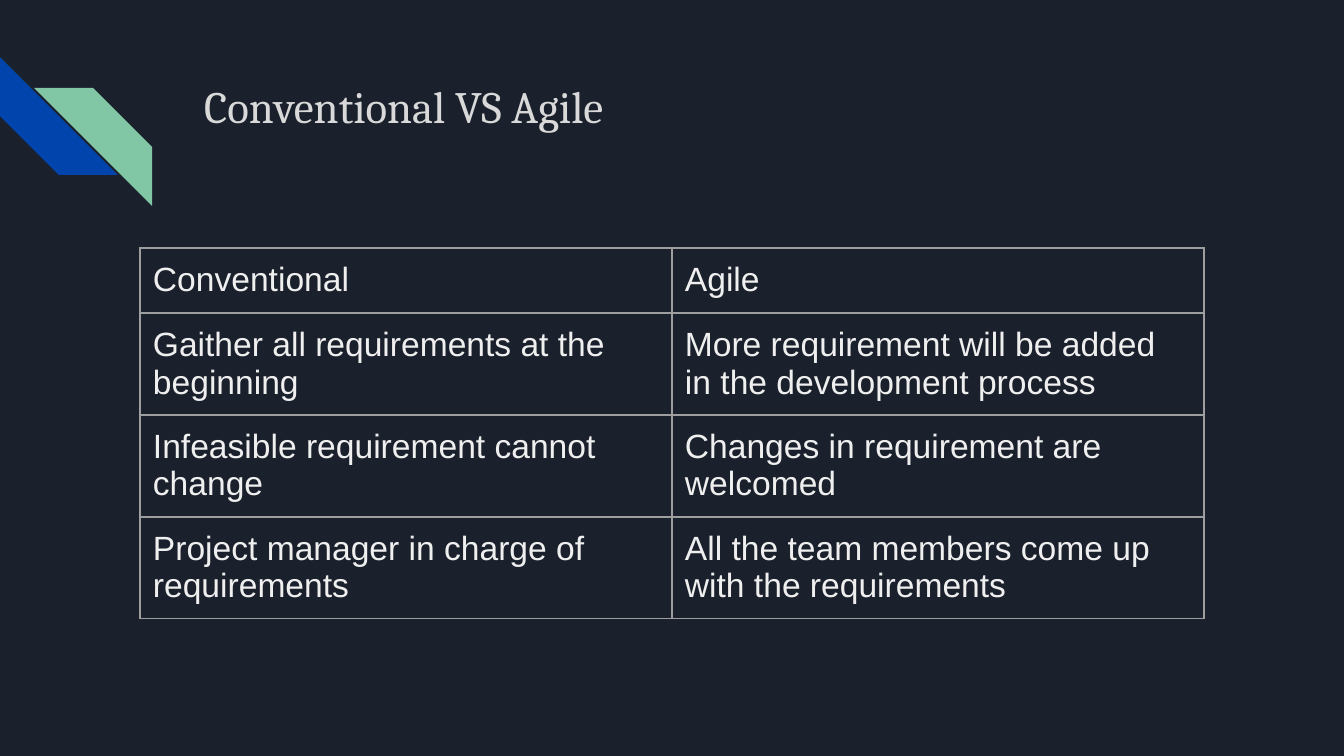
from lxml.etree import SubElement
from pptx import Presentation
from pptx.dml.color import RGBColor
from pptx.enum.shapes import MSO_SHAPE
from pptx.enum.text import MSO_ANCHOR, PP_ALIGN
from pptx.oxml.ns import qn
from pptx.util import Pt

EMU_PER_PX = 914400 / 134.4
INSET = 13
TITLE = "Conventional VS Agile"
COMPARISON = [
    ("Conventional", "Agile"),
    ("Gaither all requirements at the beginning",
     "More requirement will be added in the development process"),
    ("Infeasible requirement cannot change",
     "Changes in requirement are welcomed"),
    ("Project manager in charge of requirements",
     "All the team members come up with the requirements"),
]


def px(length):
    return round(length * EMU_PER_PX)


def color(hex_value):
    return RGBColor.from_string(hex_value)


def write(frame, text, size, font, fill, line_spacing=1.0, space_after=0):
    frame.word_wrap = True
    frame.vertical_anchor = MSO_ANCHOR.TOP
    paragraph = frame.paragraphs[0]
    paragraph.alignment = PP_ALIGN.LEFT
    paragraph.line_spacing = line_spacing
    paragraph.space_after = Pt(space_after)
    run = paragraph.add_run()
    run.text = text
    run.font.size = Pt(size)
    run.font.name = font
    run.font.bold = False
    run.font.color.rgb = color(fill)


def set_borders(cell, hex_value, width):
    properties = cell._tc.get_or_add_tcPr()
    for position, side in enumerate(("lnL", "lnR", "lnT", "lnB")):
        line = SubElement(properties, qn(f"a:{side}"), w=str(Pt(width)))
        fill = SubElement(line, qn("a:solidFill"))
        SubElement(fill, qn("a:srgbClr"), val=hex_value)
        # Borders come before the cell fill
        properties.insert(position, line)


def add_stripes(slide, left, top):
    # Two diagonal stripes, turned opposite ways
    for dx, dy, rotation, fill in ((0, 0, 270, "0145AC"), (34, 31, 90, "82C7A5")):
        stripe = slide.shapes.add_shape(
            MSO_SHAPE.DIAGONAL_STRIPE, px(left + dx), px(top + dy), px(118), px(118))
        stripe.rotation = rotation
        stripe.adjustments[0] = 0.5
        stripe.shadow.inherit = False
        stripe.fill.solid()
        stripe.fill.fore_color.rgb = color(fill)
        stripe.line.fill.background()


def add_title(slide, left, top, width, height):
    title = slide.shapes.title
    title.left, title.top = px(left), px(top)
    title.width, title.height = px(width), px(height)
    frame = title.text_frame
    frame.margin_left = frame.margin_right = px(INSET)
    frame.margin_top = frame.margin_bottom = px(INSET)
    write(frame, TITLE, size=24, font="Cambria", fill="D9D9D9",
          line_spacing=1.15, space_after=16)


def add_comparison(slide, left, top, width, row_heights):
    columns = len(COMPARISON[0])
    table = slide.shapes.add_table(
        len(COMPARISON), columns, px(left), px(top),
        px(width), px(sum(row_heights))).table
    table.first_row = table.horz_banding = False
    for column in table.columns:
        column.width = px(width / columns)
    for row, height, texts in zip(table.rows, row_heights, COMPARISON):
        row.height = px(height)
        for cell, text in zip(row.cells, texts):
            cell.margin_left = cell.margin_right = px(INSET)
            cell.margin_top = cell.margin_bottom = px(INSET)
            cell.fill.background()
            set_borders(cell, "9E9E9E", 0.75)
            write(cell.text_frame, text, size=18, font="Arial", fill="EFEFEF")


def main():
    presentation = Presentation()
    presentation.slide_width, presentation.slide_height = px(1344), px(756)
    slide = presentation.slides.add_slide(presentation.slide_layouts[5])
    slide.background.fill.solid()
    slide.background.fill.fore_color.rgb = color("1B212C")
    add_stripes(slide, 0, 57)
    add_title(slide, 191, 58, 1035, 134)
    add_comparison(slide, 140, 248, 1064, (65, 102, 102, 102))
    presentation.save("out.pptx")


if __name__ == "__main__":
    main()
